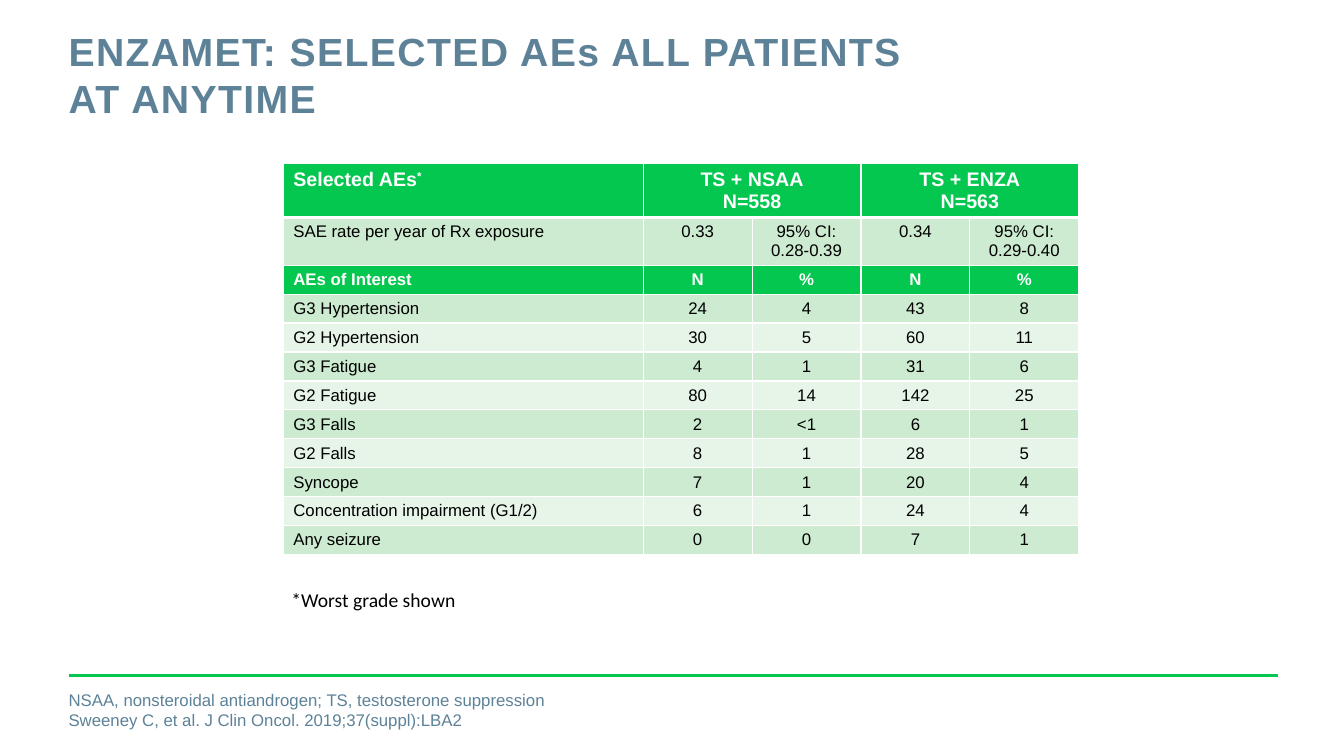
import pptx
import pptx.dml.color
import pptx.enum.shapes
import pptx.enum.text
import pptx.oxml
import pptx.oxml.ns
import pptx.util

EMU_PER_PX = 9144
GREEN, PALE, PALER = "03C74F", "CCEBD0", "E7F5E9"
WHITE, BLACK, SLATE = "FFFFFF", "000000", "5D8298"
LEFT = pptx.enum.text.PP_ALIGN.LEFT
CENTER = pptx.enum.text.PP_ALIGN.CENTER
TOP = pptx.enum.text.MSO_ANCHOR.TOP
NO_FIT = pptx.enum.text.MSO_AUTO_SIZE.NONE
GROW = pptx.enum.text.MSO_AUTO_SIZE.SHAPE_TO_FIT_TEXT
NO_MARGINS = dict(margin_left=0, margin_top=0, margin_right=0, margin_bottom=0)
COLUMN_WIDTHS = [357, 108, 108, 108, 108]
HEADER_HEIGHT, ROW_HEIGHT = 47, 28
ADVERSE_EVENTS = [
    ["Selected AEs", "TS + NSAA\nN=558", "", "TS + ENZA\nN=563", ""],
    ["SAE rate per year of Rx exposure", "0.33", "95% CI:\n0.28-0.39", "0.34", "95% CI: 0.29-0.40"],
    ["AEs of Interest", "N", "%", "N", "%"],
    ["G3 Hypertension", "24", "4", "43", "8"],
    ["G2 Hypertension", "30", "5", "60", "11"],
    ["G3 Fatigue", "4", "1", "31", "6"],
    ["G2 Fatigue", "80", "14", "142", "25"],
    ["G3 Falls", "2", "<1", "6", "1"],
    ["G2 Falls", "8", "1", "28", "5"],
    ["Syncope", "7", "1", "20", "4"],
    ["Concentration impairment (G1/2)", "6", "1", "24", "4"],
    ["Any seizure", "0", "0", "7", "1"],
]


def px(length):
    """Turn pixels into EMU."""
    return pptx.util.Emu(length * EMU_PER_PX)


def rgb(value):
    """Turn a hex string into a colour."""
    return pptx.dml.color.RGBColor.from_string(value)


def apply(target, values):
    """Set each named value on the target."""
    for name, value in values.items():
        setattr(target, name, value)


def write(frame, text, color, size, align=LEFT, bold=False, name="Arial"):
    """Fill a text frame, one paragraph a line."""
    frame.text = text
    for para in frame.paragraphs:
        para.alignment = align
        for span in para.runs:
            apply(span.font, dict(name=name, size=pptx.util.Pt(size), bold=bold))
            span.font.color.rgb = rgb(color)


def add_title(slide, text):
    """Place and format the slide title."""
    title = slide.shapes.title
    apply(title, dict(left=px(68), top=px(27), width=px(859), height=px(112)))
    frame = title.text_frame
    apply(frame, dict(NO_MARGINS, vertical_anchor=TOP, word_wrap=True, auto_size=NO_FIT))
    write(frame, text, SLATE, 28, bold=True)
    frame.paragraphs[0].runs[0].font._element.set("spc", "100")


def add_note(slide, bounds, text, color, size, name="Arial"):
    """Add an unwrapped text box without margins."""
    box = slide.shapes.add_textbox(*map(px, bounds))
    apply(box.text_frame, dict(NO_MARGINS, word_wrap=False, auto_size=GROW))
    write(box.text_frame, text, color, size, name=name)


def add_rule(slide, left, right, top):
    """Add the green line above the footer."""
    kind = pptx.enum.shapes.MSO_CONNECTOR.STRAIGHT
    rule = slide.shapes.add_connector(kind, px(left), px(top), px(right), px(top))
    rule.line.color.rgb = rgb(GREEN)
    rule.line.width = pptx.util.Pt(2)
    properties = rule._element.spPr
    properties.append(properties.makeelement(pptx.oxml.ns.qn("a:effectLst"), {}))


def add_borders(cell, widths):
    """Draw white cell borders of the given point widths."""
    namespace = pptx.oxml.ns.nsdecls("a")
    for side, width in widths.items():
        cell._tc.get_or_add_tcPr().append(pptx.oxml.parse_xml(
            f'<a:ln{side} {namespace} w="{pptx.util.Pt(width)}"><a:solidFill>'
            f'<a:srgbClr val="{WHITE}"/></a:solidFill></a:ln{side}>'))


def fill_cell(cell, row, column, text):
    """Write and format one cell by its place in the table."""
    heading = row in (0, 2)
    add_borders(cell, dict(L=1, R=1, T=3 if row == 1 else 1, B=3 if row == 0 else 1))
    cell.fill.solid()
    cell.fill.fore_color.rgb = rgb(GREEN if heading else PALE if row % 2 else PALER)
    write(cell.text_frame, text, WHITE if heading else BLACK,
          12 if row else 14, CENTER if column else LEFT, heading)


def add_superscript(para, text):
    """Append a raised run styled like the paragraph's first run."""
    first = para.runs[0].font
    span = para.add_run()
    span.text = text
    apply(span.font, dict(name=first.name, size=first.size, bold=first.bold))
    span.font.color.rgb = first.color.rgb
    span.font._element.set("baseline", "30000")


def add_event_table(slide, left, top):
    """Add the table of adverse events."""
    heights = [HEADER_HEIGHT] + [ROW_HEIGHT] * (len(ADVERSE_EVENTS) - 1)
    table = slide.shapes.add_table(
        len(heights), len(COLUMN_WIDTHS), px(left), px(top),
        px(sum(COLUMN_WIDTHS)), px(sum(heights))).table
    apply(table, dict(first_row=False, horz_banding=False))
    for column, width in zip(table.columns, COLUMN_WIDTHS):
        column.width = px(width)
    for line, height in zip(table.rows, heights):
        line.height = px(height)
    for row, texts in enumerate(ADVERSE_EVENTS):
        for column, text in enumerate(texts):
            fill_cell(table.cell(row, column), row, column, text)
    for column in (1, 3):
        table.cell(0, column).merge(table.cell(0, column + 1))
    add_superscript(table.cell(0, 0).text_frame.paragraphs[0], "*")


def main():
    """Build and save the slide."""
    deck = pptx.Presentation()
    apply(deck, dict(slide_width=px(1333), slide_height=px(750)))
    slide = deck.slides.add_slide(deck.slide_layouts[5])
    add_rule(slide, 68, 1268, 670)
    add_title(slide, "ENZAMET: SELECTED AEs ALL PATIENTS AT ANYTIME")
    add_event_table(slide, 281, 162)
    add_note(slide, (289, 583, 164, 24), "*Worst grade shown", BLACK, 14, "Calibri")
    add_note(slide, (68, 684, 476, 40),
             "NSAA, nonsteroidal antiandrogen; TS, testosterone suppression\n"
             "Sweeney C, et al. J Clin Oncol. 2019;37(suppl):LBA2", SLATE, 12)
    deck.save("out.pptx")


if __name__ == "__main__":
    main()
